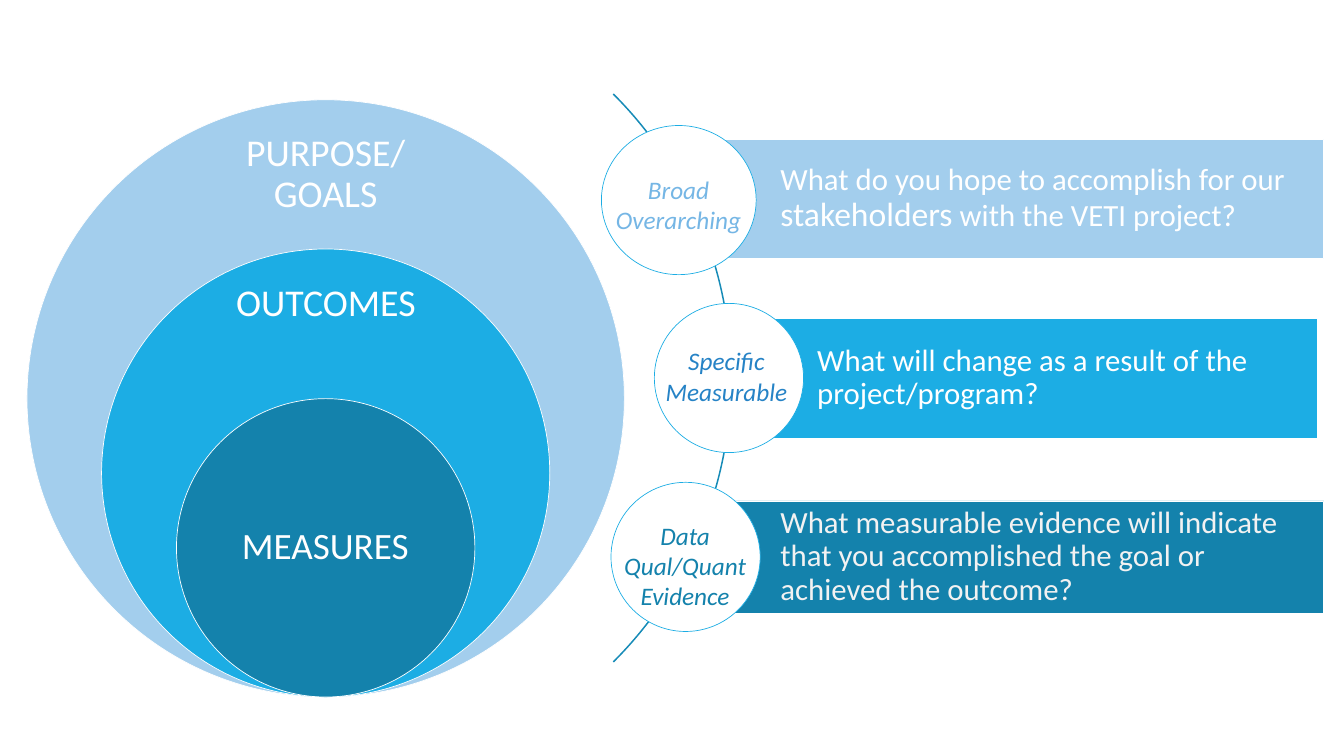
from pptx import Presentation
from pptx.dml.color import RGBColor
from pptx.enum.shapes import MSO_SHAPE
from pptx.enum.text import MSO_ANCHOR, PP_ALIGN
from pptx.util import Inches, Pt

OVAL, RECTANGLE, ARC = MSO_SHAPE.OVAL, MSO_SHAPE.RECTANGLE, MSO_SHAPE.BLOCK_ARC
LEFT, CENTER = PP_ALIGN.LEFT, PP_ALIGN.CENTER
TOP, MIDDLE = MSO_ANCHOR.TOP, MSO_ANCHOR.MIDDLE

WHITE, PALE, BRIGHT, DEEP = "FFFFFF", "A3CEED", "1CADE4", "1482AC"

presentation = Presentation()
presentation.slide_width = Inches(26.66)
presentation.slide_height = Inches(15)
slide = presentation.slides.add_slide(presentation.slide_layouts[6])


def draw_shape(kind, box, fill, line):
    shape = slide.shapes.add_shape(kind, *[Inches(value) for value in box])
    shape.shadow.inherit = False
    if fill:
        shape.fill.solid()
        shape.fill.fore_color.rgb = RGBColor.from_string(fill)
    else:
        shape.fill.background()
    shape.line.color.rgb = RGBColor.from_string(line)
    shape.line.width = Pt(1)
    return shape


def write_text(shape, paragraphs, size, color, align=CENTER, anchor=TOP,
               insets=(0.1, 0.05, 0.1, 0.05), spacing=None, italic=False):
    """Each paragraph is a list of runs: plain text, or (text, size)."""
    frame = shape.text_frame
    frame.word_wrap = True
    frame.vertical_anchor = anchor
    (frame.margin_left, frame.margin_top,
     frame.margin_right, frame.margin_bottom) = [Inches(inset) for inset in insets]
    for index, runs in enumerate(paragraphs):
        paragraph = frame.add_paragraph() if index else frame.paragraphs[0]
        paragraph.alignment = align
        if spacing:
            paragraph.line_spacing = spacing
        for item in runs:
            text, run_size = (item, size) if isinstance(item, str) else item
            run = paragraph.add_run()
            run.text = text
            run.font.name = "Calibri"
            run.font.size = Pt(run_size)
            run.font.italic = italic
            run.font.color.rgb = RGBColor.from_string(color)


# Nested circles, sharing a centre line and a bottom edge
center_x, bottom = 6.46, 13.83
for diameter, color in [(11.85, PALE), (8.89, BRIGHT), (5.92, DEEP)]:
    draw_shape(OVAL, (center_x - diameter / 2, bottom - diameter, diameter, diameter),
               color, WHITE)

# Names of the nested circles
circle_names = [
    ("PURPOSE/ GOALS", (4.39, 2.57, 4.14, 1.78), 54, MIDDLE, (0.42,) * 4, 0.9),
    ("OUTCOMES", (3.92, 5.49, 5.09, 1.01), 54, TOP, (0.1, 0.05, 0.1, 0.05), None),
    ("MEASURES", (4.36, 9.38, 4.19, 2.96), 53, MIDDLE, (0.41,) * 4, 0.9),
]
for name, box, size, anchor, insets, spacing in circle_names:
    text_box = slide.shapes.add_textbox(*[Inches(value) for value in box])
    write_text(text_box, [[name]], size, WHITE, anchor=anchor, insets=insets,
               spacing=spacing)

# Thin arc from 315 to 45 degrees behind the question rows
arc = draw_shape(ARC, (-1.43, -0.47, 15.94, 15.94), None, "168BB7")
for index, value in enumerate((189, 27, 0.001)):
    arc.adjustments[index] = value

# Question rows: bar, round badge and badge label
rows = [
    {"bar": (13.6, 2.76, 12.66, 2.37), "fill": PALE, "color": WHITE,
     "question": ["What do you hope to accomplish for our ", ("stakeholders", 48),
                  " with the VETI project?"],
     "badge": (11.93, 2.49, 3.07, 2.96), "label_box": (12.06, 3.4, 2.8, 1.31),
     "label": [["Broad Overarching"]], "label_color": "75B6E5"},
    {"bar": (14.33, 6.32, 11.8, 2.37), "fill": BRIGHT, "color": WHITE,
     "question": ["What will change as a result of the project/program?"],
     "badge": (12.98, 6.02, 2.96, 2.96), "label_box": (13.01, 6.81, 2.8, 1.31),
     "label": [["Specific"], ["Measurable"]], "label_color": "2683C6"},
    {"bar": (13.6, 9.94, 12.66, 2.22), "fill": DEEP, "color": "F2F2F2",
     "question": ["What measurable evidence will indicate that you accomplished "
                  "the goal or achieved the outcome?"],
     "badge": (12.12, 9.57, 2.96, 2.96), "label_box": (12.06, 10.27, 3.06, 1.92),
     "label": [["Data Qual/Quant Evidence"]], "label_color": DEEP},
]
for row in rows:
    bar = draw_shape(RECTANGLE, row["bar"], row["fill"], WHITE)
    write_text(bar, [row["question"]], 44, row["color"], align=LEFT, anchor=MIDDLE,
               insets=(1.88, 0.12, 0.12, 0.12), spacing=0.9)
    draw_shape(OVAL, row["badge"], WHITE, BRIGHT)
    label = slide.shapes.add_textbox(*[Inches(value) for value in row["label_box"]])
    write_text(label, row["label"], 36, row["label_color"], italic=True)

presentation.save("out.pptx")
